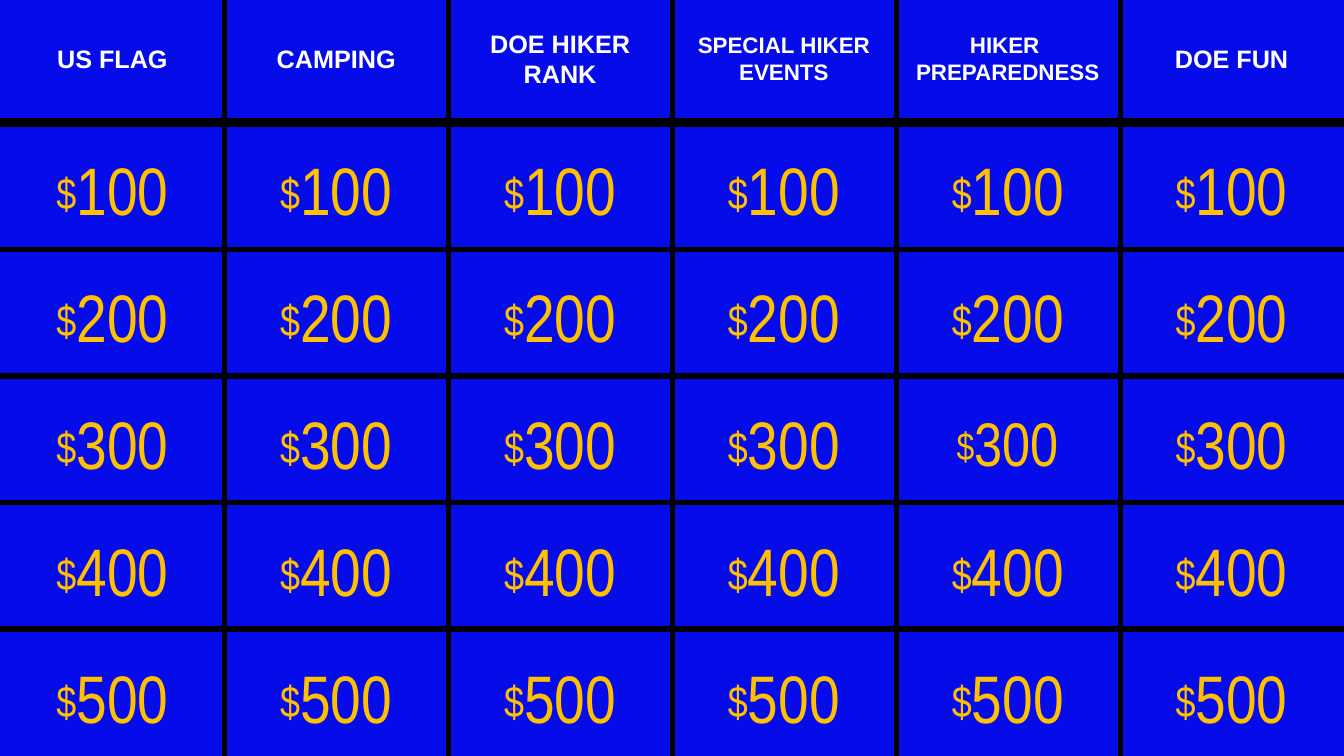
from lxml import etree
from pptx import Presentation
from pptx.dml.color import RGBColor
from pptx.enum.shapes import MSO_CONNECTOR, MSO_SHAPE
from pptx.enum.text import MSO_ANCHOR, PP_ALIGN
from pptx.oxml.ns import qn
from pptx.util import Inches, Pt

RECT = MSO_SHAPE.RECTANGLE
STRAIGHT = MSO_CONNECTOR.STRAIGHT
MIDDLE = MSO_ANCHOR.MIDDLE
CENTER = PP_ALIGN.CENTER

# Content: category and its text size, one per column
CATEGORIES = [
    ("US FLAG", 18),
    ("CAMPING", 18),
    ("DOE HIKER RANK", 18),
    ("SPECIAL HIKER EVENTS", 16),
    ("HIKER \nPREPAREDNESS", 16),
    ("DOE FUN", 18),
]
VALUES = ["100", "200", "300", "400", "500"]
PRIZE_SIZES = (54, 48)  # dollar sign, number
SMALLER_PRIZES = {(4, "300"): (48, 44)}

COLORS = {"board": "060CE9", "prize": "FFC000", "category": "FFFFFF", "grid": "000000"}

# Layout in inches
SLIDE_W, SLIDE_H = 13.33, 7.5
LEFT, TOP = 0.01, -0.05
CELL_W, CELL_H = 2.21, 1.26
COL_STEP = 2.22
GRID_X, GRID_Y, GRID_BOTTOM = 2.23, 1.22, 6.24
GRID_ROW_STEP = (GRID_BOTTOM - GRID_Y) / (len(VALUES) - 1)


def rgb(name):
    return RGBColor.from_string(COLORS[name])


def add_text(p, text, size, color, font, bold=False, baseline=None):
    for i, line in enumerate(text.split("\n")):
        if i:
            p.add_line_break()
        r = p.add_run()
        r.text = line
        r.font.size = Pt(size)
        r.font.name = font
        r.font.bold = bold
        r.font.color.rgb = rgb(color)
        if baseline is not None:
            r.font._element.set("baseline", str(baseline * 1000))


def add_cell(s, col, row):
    sp = s.shapes.add_shape(RECT, Inches(LEFT + col * COL_STEP), Inches(TOP + row * CELL_H),
                            Inches(CELL_W), Inches(CELL_H))
    sp.shadow.inherit = False
    sp.fill.solid()
    sp.fill.fore_color.rgb = rgb("board")
    sp.line.fill.background()
    tf = sp.text_frame
    tf.word_wrap = True
    tf.vertical_anchor = MIDDLE
    p = tf.paragraphs[0]
    p.alignment = CENTER
    return p


def add_grid_line(s, x1, y1, x2, y2, width):
    line = s.shapes.add_connector(STRAIGHT, Inches(x1), Inches(y1), Inches(x2), Inches(y2))
    line.line.color.rgb = rgb("grid")
    line.line.width = Pt(width)
    etree.SubElement(line._element.spPr, qn("a:effectLst"))


def main():
    prs = Presentation()
    prs.slide_width, prs.slide_height = Inches(SLIDE_W), Inches(SLIDE_H)
    s = prs.slides.add_slide(prs.slide_layouts[6])
    s.background.fill.solid()
    s.background.fill.fore_color.rgb = rgb("board")

    # Category headings and the prizes below each
    for col, (category, size) in enumerate(CATEGORIES):
        add_text(add_cell(s, col, 0), category, size, "category", "Arial", bold=True)
        for row, value in enumerate(VALUES, start=1):
            p = add_cell(s, col, row)
            sign_size, number_size = SMALLER_PRIZES.get((col, value), PRIZE_SIZES)
            add_text(p, "$", sign_size, "prize", "Arial Narrow", baseline=8)
            add_text(p, value, number_size, "prize", "Arial Narrow", baseline=0)

    # Row lines, heavier under the headings
    for i in range(len(VALUES)):
        y = GRID_Y + i * GRID_ROW_STEP
        add_grid_line(s, 0, y, SLIDE_W, y, 4 if i else 6.5)

    # Column lines
    for i in range(len(CATEGORIES) - 1):
        x = GRID_X + i * COL_STEP
        add_grid_line(s, x, 0, x, SLIDE_H, 3.5)

    prs.save("out.pptx")


if __name__ == "__main__":
    main()
